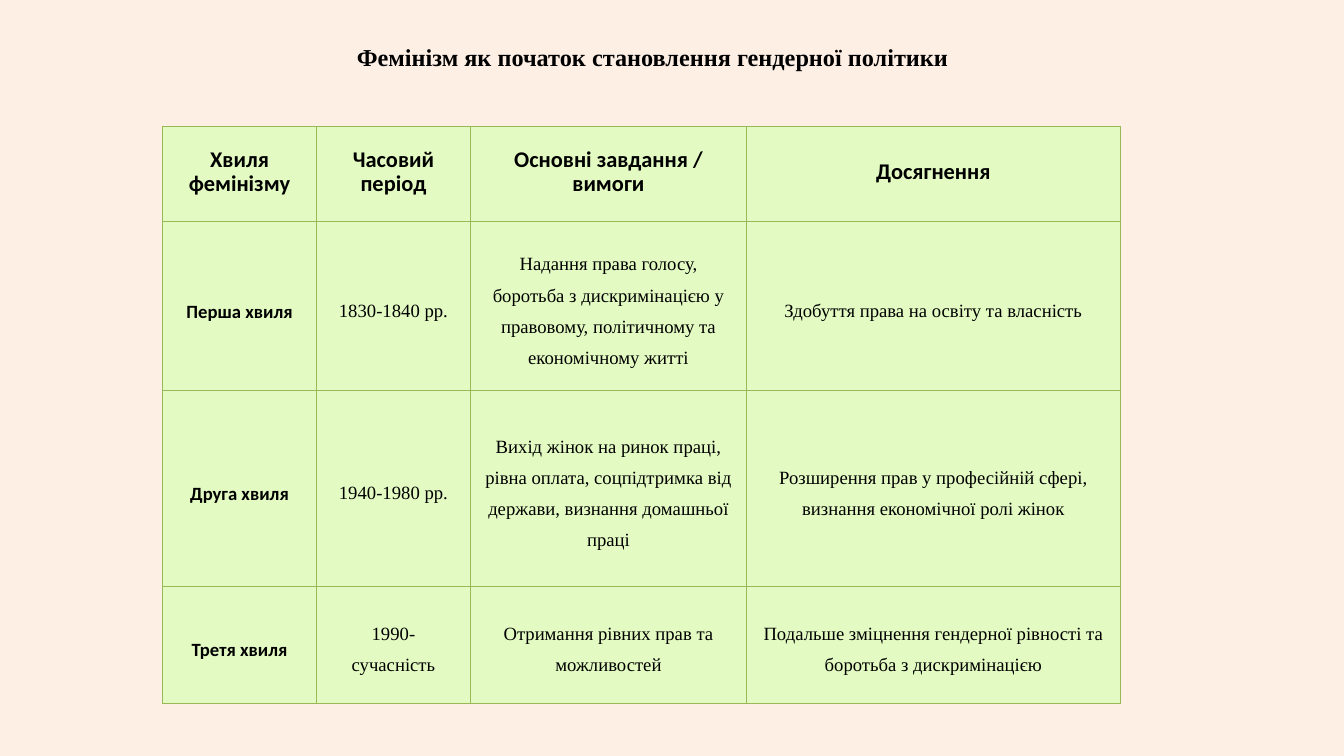
import pptx
import pptx.util
import pptx.dml.color
import pptx.enum.text
import pptx.oxml
import pptx.oxml.ns
from pptx.util import Inches

RGBColor = pptx.dml.color.RGBColor
BACKGROUND = RGBColor(0xFD, 0xEF, 0xE4)
CELL_FILL = RGBColor(0xE3, 0xFB, 0xC2)
BORDER = RGBColor(0x98, 0xB9, 0x55)
BLACK = RGBColor(0, 0, 0)

ROWS = [
    ["Хвиля фемінізму", "Часовий період", "Основні завдання / вимоги", "Досягнення"],
    ["Перша хвиля", "1830-1840 рр.",
     "Надання права голосу, боротьба з дискримінацією у правовому, політичному та економічному житті",
     "Здобуття права на освіту та власність"],
    ["Друга хвиля", "1940-1980 рр.",
     "Вихід жінок на ринок праці, рівна оплата, соцпідтримка від держави, визнання домашньої праці",
     "Розширення прав у професійній сфері, визнання економічної ролі жінок"],
    ["Третя хвиля", "1990-сучасність", "Отримання рівних прав та можливостей",
     "Подальше зміцнення гендерної рівності та боротьба з дискримінацією"],
]
COL_WIDTHS = [2.29, 2.29, 4.11, 5.56]
ROW_HEIGHTS = [1.42, 2.51, 2.91, 1.75]


class SlideBuilder:
    """Holds the text styles and the current slide."""

    STYLES = {
        "title": {"name": "Times New Roman", "size": 26, "bold": True, "spacing": pptx.util.Pt(36.4)},
        "header": {"name": "Calibri", "size": 24, "bold": True, "spacing": pptx.util.Pt(25.2)},
        "wave": {"name": "Calibri", "size": 20, "bold": True, "spacing": 1.5},
        "body": {"name": "Times New Roman", "size": 20, "bold": False, "spacing": 1.5},
    }

    def __init__(self, prs):
        """Add a title-only slide with a plain background."""
        self.s = prs.slides.add_slide(prs.slide_layouts[5])
        fill = self.s.background.fill
        fill.solid()
        fill.fore_color.rgb = BACKGROUND

    def set_text(self, tf, text, style):
        """Write one centred paragraph in a named style."""
        fmt = self.STYLES[style]
        p = tf.paragraphs[0]
        p.alignment = pptx.enum.text.PP_ALIGN.CENTER
        p.line_spacing = fmt["spacing"]
        r = p.add_run()
        r.text = text
        font = {"name": fmt["name"], "size": pptx.util.Pt(fmt["size"]), "bold": fmt["bold"]}
        for key, value in font.items():
            setattr(r.font, key, value)
        r.font.color.rgb = BLACK

    def title(self, text, left, top, width, height):
        """Place and format the title placeholder."""
        sp = self.s.shapes.title
        box = {"left": left, "top": top, "width": width, "height": height}
        for key, value in box.items():
            setattr(sp, key, Inches(value))
        tf = sp.text_frame
        frame = {"margin_left": 0, "margin_right": 0, "margin_top": 0, "margin_bottom": 0,
                 "word_wrap": True, "vertical_anchor": pptx.enum.text.MSO_ANCHOR.TOP,
                 "auto_size": pptx.enum.text.MSO_AUTO_SIZE.NONE}
        for key, value in frame.items():
            setattr(tf, key, value)
        self.set_text(tf, text, "title")

    def border(self, cell):
        """Draw a thin line on all four sides of a cell."""
        tc_pr = cell._tc.get_or_add_tcPr()
        for i, side in enumerate(("lnL", "lnR", "lnT", "lnB")):
            tc_pr.insert(i, pptx.oxml.parse_xml(
                f'<a:{side} {pptx.oxml.ns.nsdecls("a")} w="{pptx.util.Pt(0.75)}">'
                f'<a:solidFill><a:srgbClr val="{BORDER}"/></a:solidFill></a:{side}>'))

    def cell(self, cell, text, style):
        """Fill, frame and label one table cell."""
        margin = Inches(0.21)
        fmt = {"margin_left": margin, "margin_right": margin, "margin_top": margin,
               "margin_bottom": margin, "vertical_anchor": pptx.enum.text.MSO_ANCHOR.MIDDLE}
        for key, value in fmt.items():
            setattr(cell, key, value)
        cell.fill.solid()
        cell.fill.fore_color.rgb = CELL_FILL
        self.border(cell)
        self.set_text(cell.text_frame, text, style)

    def table(self, rows, left, top, widths, heights):
        """Add a table with a header row and a bold first column."""
        table = self.s.shapes.add_table(
            len(heights), len(widths), Inches(left), Inches(top),
            Inches(sum(widths)), Inches(sum(heights))).table
        table.horz_banding = False
        for column, width in zip(table.columns, widths):
            column.width = Inches(width)
        for row, height in zip(table.rows, heights):
            row.height = Inches(height)
        for i, texts in enumerate(rows):
            for j, text in enumerate(texts):
                style = "header" if i == 0 else "wave" if j == 0 else "body"
                self.cell(table.cell(i, j), text, style)


def main():
    """Build and save the slide."""
    prs = pptx.Presentation()
    prs.slide_width, prs.slide_height = Inches(20), Inches(11.25)
    slide = SlideBuilder(prs)
    slide.table(ROWS, 2.42, 1.88, COL_WIDTHS, ROW_HEIGHTS)
    slide.title("Фемінізм як початок становлення гендерної політики", 4.96, 0.55, 9.51, 1.04)
    prs.save("out.pptx")


if __name__ == "__main__":
    main()
